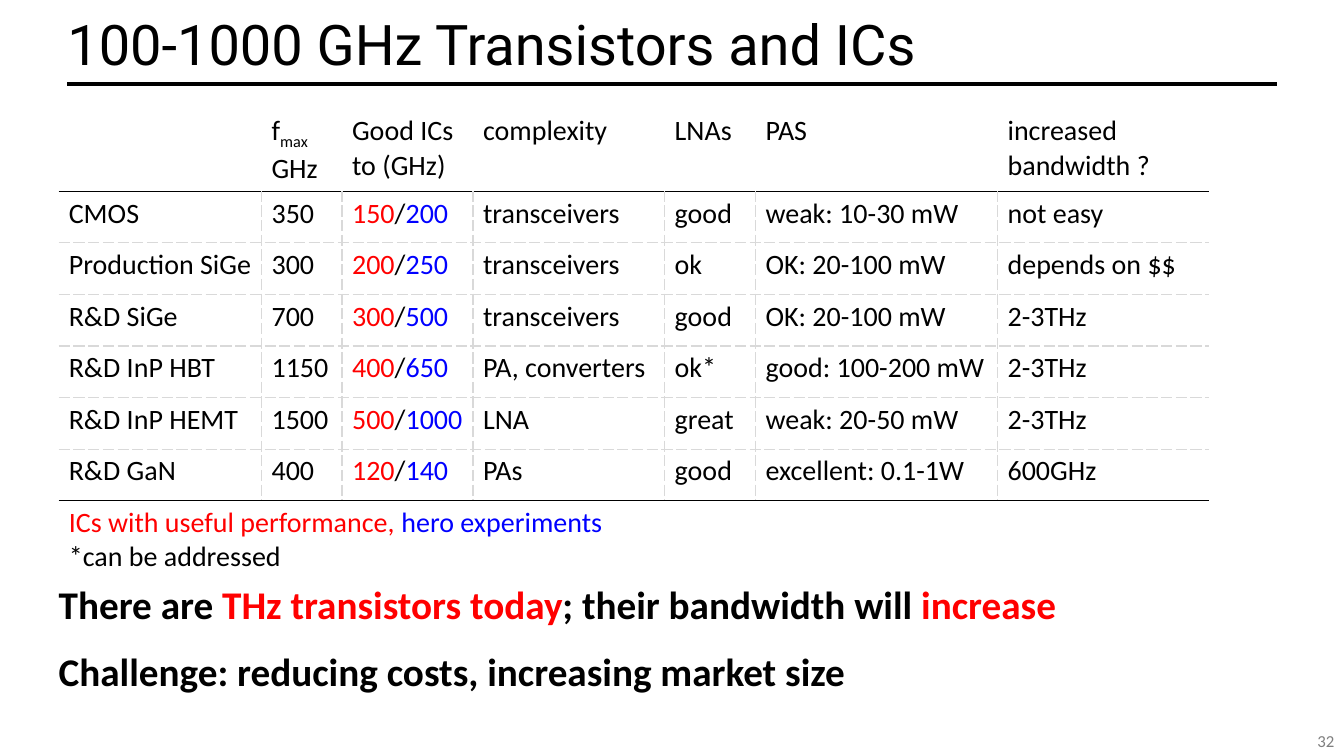
from dataclasses import dataclass

from lxml import etree
from pptx import Presentation
from pptx.dml.color import RGBColor
from pptx.enum.shapes import MSO_CONNECTOR
from pptx.enum.text import MSO_ANCHOR, PP_ALIGN
from pptx.oxml.ns import qn
from pptx.util import Cm, Pt

STRAIGHT = MSO_CONNECTOR.STRAIGHT
MIDDLE, TOP = MSO_ANCHOR.MIDDLE, MSO_ANCHOR.TOP
LEFT, RIGHT = PP_ALIGN.LEFT, PP_ALIGN.RIGHT

BLACK, WHITE, RED, BLUE = "000000", "FFFFFF", "FF0000", "0000FF"
GRID_GREY, NUMBER_GREY = "D9D9D9", "7F7F7F"
NO_STYLE = "{2D5ABB26-0587-4C30-8999-92F81FD0307C}"

TITLE_FONT = {"name": "Roboto", "size": Pt(40)}
TABLE_FONT = {"name": "Calibri", "size": Pt(20)}
MESSAGE_FONT = {"name": "Calibri", "size": Pt(28), "bold": True}
NUMBER_FONT = {"name": "Calibri", "size": Pt(12)}


@dataclass(frozen=True)
class Piece:
    text: str
    color: str = BLACK
    subscript: bool = False


@dataclass(frozen=True)
class TextArea:
    left: float
    top: float
    width: float
    height: float
    paragraphs: list
    font: dict
    anchor: int = TOP
    align: int = LEFT
    margin: float = 0
    space_before: float = 0
    line_spacing: float = 1.0


@dataclass(frozen=True)
class Technology:
    name: str
    fmax: str
    useful_to: str
    hero_to: str
    complexity: str
    lnas: str
    pas: str
    bandwidth: str

    def cells(self) -> list:
        limits = [Piece(self.useful_to, RED), Piece("/"), Piece(self.hero_to, BLUE)]
        before, after = (self.name, self.fmax), (self.complexity, self.lnas, self.pas, self.bandwidth)
        return [plain(t) for t in before] + [[limits]] + [plain(t) for t in after]


def plain(text: str) -> list:
    return [[Piece(text)]]


def rgb(color: str) -> RGBColor:
    return RGBColor.from_string(color)


def write(frame, paragraphs: list, font: dict) -> None:
    for index, pieces in enumerate(paragraphs):
        paragraph = frame.paragraphs[0] if index == 0 else frame.add_paragraph()
        for piece in pieces:
            for line_index, line in enumerate(piece.text.split("\n")):
                if line_index:
                    paragraph.add_line_break()
                run = paragraph.add_run()
                run.text = line
                for attribute, value in font.items():
                    setattr(run.font, attribute, value)
                run.font.color.rgb = rgb(piece.color)
                if piece.subscript:
                    run.font._element.set("baseline", "-25000")


def add_text(slide, area: TextArea) -> None:
    box = slide.shapes.add_textbox(Cm(area.left), Cm(area.top), Cm(area.width), Cm(area.height))
    frame = box.text_frame
    margin = Cm(area.margin)
    layout = {"word_wrap": True, "vertical_anchor": area.anchor, "margin_left": margin,
              "margin_right": margin, "margin_top": margin / 2, "margin_bottom": margin / 2}
    for attribute, value in layout.items():
        setattr(frame, attribute, int(value) if attribute.startswith("margin") else value)
    write(frame, area.paragraphs, area.font)
    for index, paragraph in enumerate(frame.paragraphs):
        paragraph.alignment = area.align
        paragraph.line_spacing = area.line_spacing
        if index:
            paragraph.space_before = Pt(area.space_before)


def add_border(cell, side: str, color: str, dash: str) -> None:
    line = etree.SubElement(cell._tc.get_or_add_tcPr(), qn(f"a:ln{side}"), w=str(Pt(1)))
    fill = etree.SubElement(line, qn("a:solidFill"))
    etree.SubElement(fill, qn("a:srgbClr"), val=color)
    etree.SubElement(line, qn("a:prstDash"), val=dash)


def add_borders(cell, row: int, column: int, last_row: int, last_column: int) -> None:
    body = 0 < row < last_row
    grid, rule = (GRID_GREY, "sysDash"), (BLACK, "solid")
    if body and column > 0:
        add_border(cell, "L", *grid)
    if body and column < last_column:
        add_border(cell, "R", *grid)
    if row > 0:
        add_border(cell, "T", *(rule if row in (1, last_row) else grid))
    if row < last_row:
        add_border(cell, "B", *(rule if row in (0, last_row - 1) else grid))


# Content
TITLE = TextArea(1.7, 0.43, 30.91, 1.57, plain("100-1000 GHz Transistors and ICs"),
                 TITLE_FONT, anchor=MIDDLE, line_spacing=0.87)
PAGE_NUMBER = TextArea(31.9, 18.34, 1.98, 0.71, [[Piece("32", NUMBER_GREY)]], NUMBER_FONT,
                       align=RIGHT, margin=0.25, line_spacing=0.9)
MESSAGE = TextArea(1.48, 14.63, 30.63, 3.0, [
    [Piece("There are "), Piece("THz transistors today", RED),
     Piece("; their bandwidth will "), Piece("increase", RED)],
    [Piece("Challenge: reducing costs, increasing market size")],
], MESSAGE_FONT, space_before=14)

HEADINGS = [
    [], [[Piece("f"), Piece("max", subscript=True)], [Piece("GHz")]],
    *map(plain, ("Good ICs to (GHz)", "complexity", "LNAs", "PAS", "increased \nbandwidth ?")),
]
TECHNOLOGIES = [
    Technology("CMOS", "350", "150", "200", "transceivers", "good", "weak: 10-30 mW", "not easy"),
    Technology("Production SiGe", "300", "200", "250", "transceivers", "ok", "OK: 20-100 mW", "depends on $$"),
    Technology("R&D SiGe", "700", "300", "500", "transceivers", "good", "OK: 20-100 mW", "2-3THz"),
    Technology("R&D InP HBT", "1150", "400", "650", "PA, converters", "ok*", "good: 100-200 mW", "2-3THz"),
    Technology("R&D InP HEMT", "1500", "500", "1000", "LNA", "great", "weak: 20-50 mW", "2-3THz"),
    Technology("R&D GaN", "400", "120", "140", "PAs", "good", "excellent: 0.1-1W", "600GHz"),
]
LEGEND = [[Piece("ICs with useful performance, ", RED), Piece("hero experiments", BLUE)],
          [Piece("*can be addressed")]]
COLUMN_WIDTHS = [5.11, 2.03, 3.3, 4.83, 2.29, 6.1, 5.33]
ROW_HEIGHTS = [2.07] + [1.3] * len(TECHNOLOGIES) + [1.95]


def add_comparison(slide) -> None:
    rows = [HEADINGS, *(technology.cells() for technology in TECHNOLOGIES),
            [LEGEND] + [[]] * (len(COLUMN_WIDTHS) - 1)]
    last_row, last_column = len(rows) - 1, len(COLUMN_WIDTHS) - 1
    frame = slide.shapes.add_table(len(rows), len(COLUMN_WIDTHS), Cm(1.48), Cm(2.75),
                                   Cm(sum(COLUMN_WIDTHS)), Cm(sum(ROW_HEIGHTS)))
    comparison = frame.table
    comparison.first_row = comparison.horz_banding = False
    comparison._tbl.tblPr.find(qn("a:tableStyleId")).text = NO_STYLE
    for column, width in zip(comparison.columns, COLUMN_WIDTHS):
        column.width = Cm(width)
    for row, height in zip(comparison.rows, ROW_HEIGHTS):
        row.height = Cm(height)
    comparison.cell(last_row, 0).merge(comparison.cell(last_row, last_column))
    for row_index, row in enumerate(rows):
        for column_index, paragraphs in enumerate(row):
            cell = comparison.cell(row_index, column_index)
            write(cell.text_frame, paragraphs, TABLE_FONT)
            add_borders(cell, row_index, column_index, last_row, last_column)
            cell.fill.solid()
            cell.fill.fore_color.rgb = rgb(WHITE)


def add_title_rule(slide) -> None:
    rule = slide.shapes.add_connector(STRAIGHT, Cm(1.7), Cm(2.12), Cm(32.18), Cm(2.12))
    rule.line.color.rgb = rgb(BLACK)
    rule.line.width = Pt(3)
    etree.SubElement(rule._element.spPr, qn("a:effectLst"))


def main() -> None:
    deck = Presentation()
    deck.slide_width, deck.slide_height = Cm(33.87), Cm(19.05)
    slide = deck.slides.add_slide(deck.slide_layouts[6])

    # Title, comparison table and closing message
    add_title_rule(slide)
    add_text(slide, PAGE_NUMBER)
    add_text(slide, TITLE)
    add_comparison(slide)
    add_text(slide, MESSAGE)
    deck.save("out.pptx")


if __name__ == "__main__":
    main()
